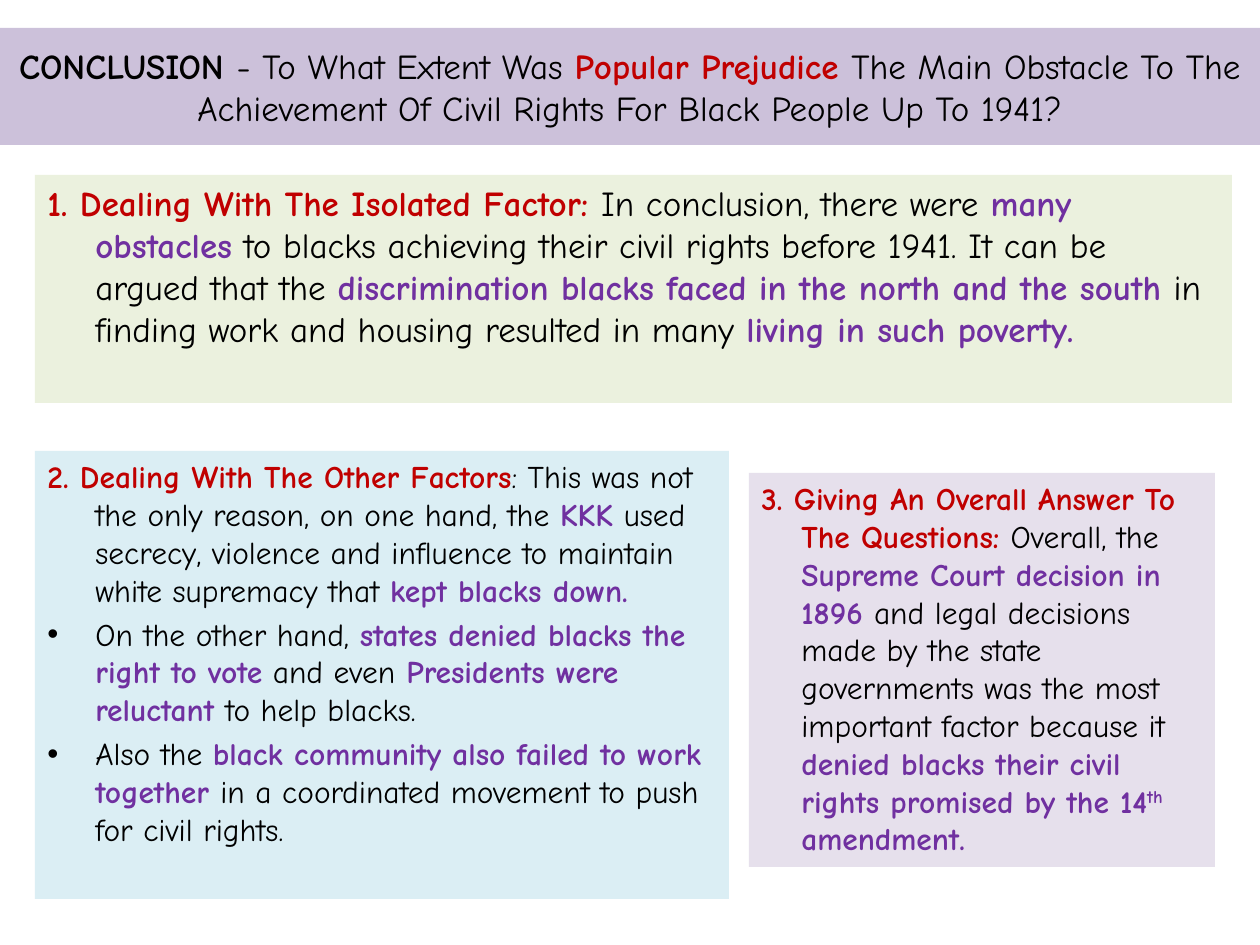
import pptx
import pptx.dml.color
import pptx.enum.shapes
import pptx.enum.text
import pptx.oxml.ns
import pptx.util
from lxml import etree

PX = 914400 // 126
COLORS = {
    "text": "000000", "heading": "C00000", "key": "7030A0",
    "title_bg": "CCC1DA", "isolated_bg": "EBF1DE",
    "other_bg": "DBEEF4", "overall_bg": "E6E0EC",
}
# run style: (colour, bold, superscript)
STYLES = {
    "text": ("text", False, False),
    "strong": ("text", True, False),
    "heading": ("heading", True, False),
    "key": ("key", True, False),
    "super": ("key", True, True),
}


class Deck:
    """Holds the presentation style and the current slide."""

    font = "Comic Neue"

    def __init__(self, width, height):
        self.prs = pptx.Presentation()
        self.prs.slide_width = width * PX
        self.prs.slide_height = height * PX

    def slide(self):
        self.s = self.prs.slides.add_slide(self.prs.slide_layouts[6])

    def panel(self, x, y, w, h, fill, middle=False):
        sp = self.s.shapes.add_shape(
            pptx.enum.shapes.MSO_SHAPE.RECTANGLE, x * PX, y * PX, w * PX, h * PX)
        sp.shadow.inherit = False
        sp.fill.solid()
        sp.fill.fore_color.rgb = pptx.dml.color.RGBColor.from_string(COLORS[fill])
        sp.line.fill.background()
        tf = sp.text_frame
        tf.word_wrap = True
        anchor = pptx.enum.text.MSO_ANCHOR
        tf.vertical_anchor = anchor.MIDDLE if middle else anchor.TOP
        return tf

    def paragraph(self, tf, runs, size, hang=0, bullet=False, center=False):
        """Add a paragraph of (style, text) runs with a hanging indent in px."""
        first = not tf.paragraphs[0].runs
        p = tf.paragraphs[0] if first else tf.add_paragraph()
        align = pptx.enum.text.PP_ALIGN
        p.alignment = align.CENTER if center else align.LEFT
        if not first:
            p.space_before = pptx.util.Pt(size * 0.2)
        pPr = p._p.get_or_add_pPr()
        pPr.set("marL", str(hang * PX))
        pPr.set("indent", str(-hang * PX))
        if bullet:
            font = etree.SubElement(pPr, pptx.oxml.ns.qn("a:buFont"))
            font.set("typeface", "Arial")
            etree.SubElement(pPr, pptx.oxml.ns.qn("a:buChar")).set("char", "•")
        for style, text in runs:
            color, bold, superscript = STYLES[style]
            r = p.add_run()
            r.text = text
            r.font.name = self.font
            r.font.size = pptx.util.Pt(size)
            r.font.bold = bold
            r.font.color.rgb = pptx.dml.color.RGBColor.from_string(COLORS[color])
            if superscript:
                r._r.get_or_add_rPr().set("baseline", "30000")


def main():
    deck = Deck(1260, 945)
    deck.slide()

    tf = deck.panel(35, 175, 1197, 228, "isolated_bg")
    deck.paragraph(tf, [
        ("heading", "1. Dealing With The Isolated Factor: "),
        ("text", "In conclusion, there were "),
        ("key", "many obstacles"),
        ("text", " to blacks achieving their civil rights before 1941. "
                 "It can be argued that the "),
        ("key", "discrimination blacks faced in the north and the south"),
        ("text", " in finding work and housing resulted in many "),
        ("key", "living in such poverty."),
    ], 20, hang=48)

    tf = deck.panel(0, 28, 1260, 117, "title_bg", middle=True)
    deck.paragraph(tf, [
        ("strong", "CONCLUSION "),
        ("text", "- To What Extent Was "),
        ("heading", "Popular Prejudice "),
        ("text", "The Main Obstacle To The Achievement Of Civil Rights "
                 "For Black People Up To 1941?"),
    ], 20, center=True)

    tf = deck.panel(749, 473, 466, 394, "overall_bg")
    deck.paragraph(tf, [
        ("heading", "3. Giving An Overall Answer To The Questions: "),
        ("text", "Overall, the "),
        ("key", "Supreme Court decision in 1896 "),
        ("text", "and legal decisions made by the state governments was "
                 "the most important factor because it "),
        ("key", "denied blacks their civil rights promised by the 14"),
        ("super", "th"),
        ("key", " amendment."),
    ], 18, hang=40)

    tf = deck.panel(35, 451, 694, 448, "other_bg")
    deck.paragraph(tf, [
        ("heading", "2. Dealing With The Other Factors"),
        ("text", ": This was not the only reason, on one hand, the "),
        ("key", "KKK"),
        ("text", " used secrecy, violence and influence to maintain "
                 "white supremacy that "),
        ("key", "kept blacks down."),
    ], 18, hang=48)
    deck.paragraph(tf, [
        ("text", "On the other hand, "),
        ("key", "states denied blacks the right to vote"),
        ("text", " and even"),
        ("key", " Presidents were reluctant "),
        ("text", "to help blacks."),
    ], 18, hang=48, bullet=True)
    deck.paragraph(tf, [
        ("text", "Also the "),
        ("key", "black community also failed to work together "),
        ("text", "in a coordinated movement to push for civil rights."),
    ], 18, hang=48, bullet=True)

    deck.prs.save("out.pptx")


if __name__ == "__main__":
    main()
